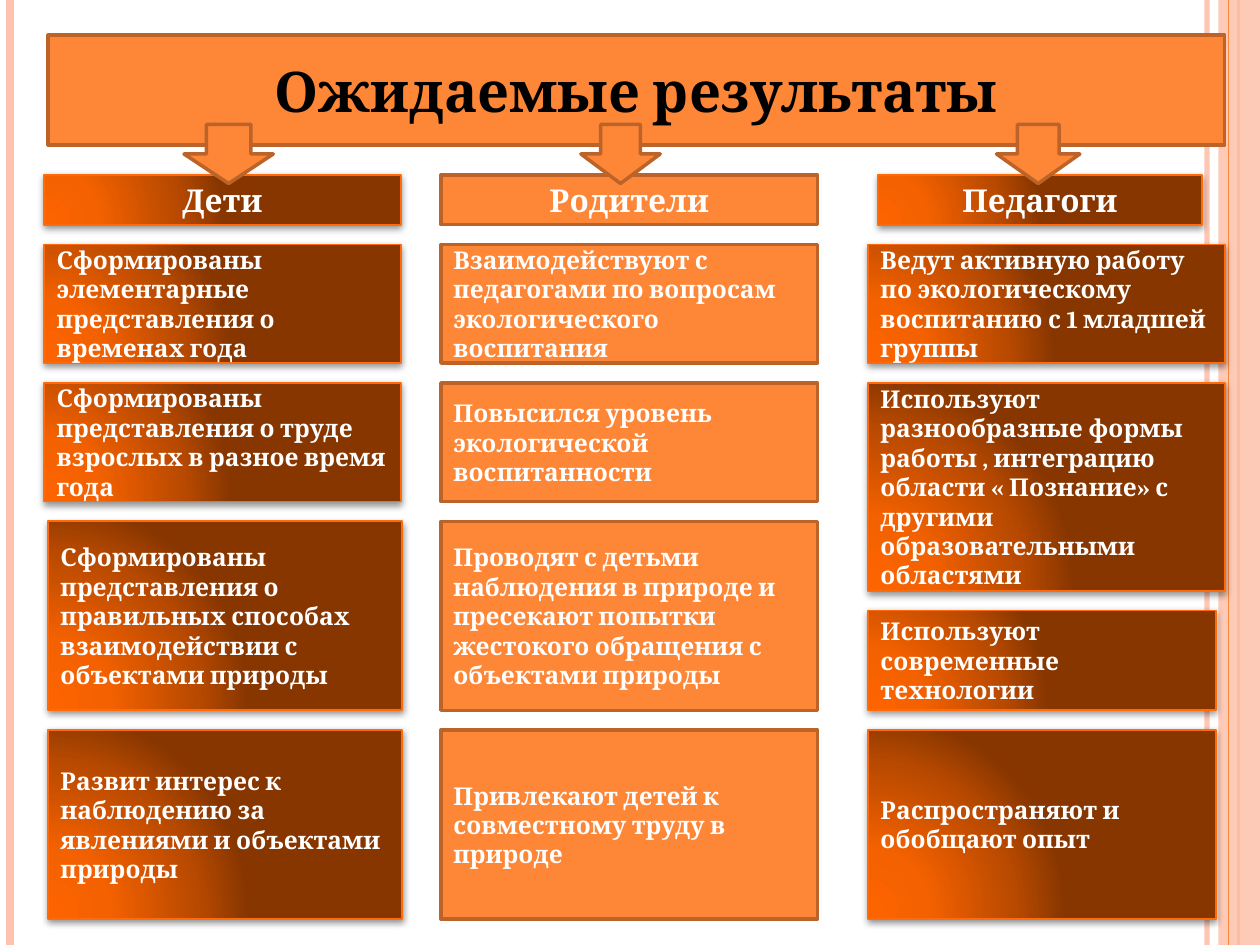
from lxml.etree import SubElement
from pptx import Presentation
from pptx.dml.color import RGBColor
from pptx.enum.shapes import MSO_CONNECTOR, MSO_SHAPE
from pptx.enum.text import MSO_ANCHOR, PP_ALIGN
from pptx.oxml import parse_xml
from pptx.oxml.ns import nsdecls, qn
from pptx.util import Cm, Pt

HUES = {
    "pale": "FEC3AE", "main": "FE8637", "edge": "BC6329",
    "glow": "FF6B0A", "white": "FFFFFF", "black": "000000",
}
STOPS = {0: "FD6400", 30: "F46100", 75: "B74900", 100: "873600"}
FONT = "Cambria"
TOP, GAP = 3.53, 0.4

KIDS = [
    ("Дети", 0.89, 7.19, 1),
    ("Сформированы элементарные представления о временах года", 0.89, 7.19, 2.39),
    ("Сформированы представления о труде взрослых в разное время года", 0.89, 7.19, 2.39),
    ("Сформированы представления о правильных способах взаимодействии "
     "с объектами природы", 0.97, 7.14, 3.81),
    ("Развит интерес к наблюдению за явлениями и объектами природы", 0.97, 7.14, 3.81),
]
FOLKS = [
    ("Родители", 8.89, 7.59, 1),
    ("Взаимодействуют с педагогами по вопросам экологического воспитания",
     8.89, 7.59, 2.39),
    ("Повысился уровень экологической воспитанности", 8.89, 7.59, 2.39),
    ("Проводят с детьми наблюдения в природе и пресекают попытки "
     "жестокого обращения с объектами природы", 8.89, 7.59, 3.81),
    ("Привлекают детей к совместному труду в природе", 8.89, 7.59, 3.81),
]
STAFF = [
    ("Педагоги", 17.7, 6.53, 1),
    ("Ведут активную работу по экологическому воспитанию с 1 младшей группы",
     17.5, 7.19, 2.39),
    ("Используют разнообразные формы работы , интеграцию области « Познание» "
     "с другими образовательными областями", 17.5, 7.19, 4.19),
    ("Используют современные технологии", 17.5, 7.01, 2),
    ("Распространяют и обобщают опыт", 17.5, 7.01, 3.81),
]
ARROWS = [(3.71, 1.8), (11.71, 1.6), (20.09, 1.68)]
RULES = [(24.33, 3, "pale", 93), (0.2, 4.5, "pale", 100), (24.97, 1.5, "main", 100)]


def hue(name):
    return RGBColor.from_string(HUES[name])


def fade(shape, share):
    for clr in shape.element.spPr.iter(qn("a:srgbClr")):
        SubElement(clr, qn("a:alpha"), val=str(share * 1000))


def add_rule(slide, x, width, name, share=100):
    line = slide.shapes.add_connector(MSO_CONNECTOR.STRAIGHT, Cm(x), 0, Cm(x), Cm(19.05))
    line.line.color.rgb = hue(name)
    line.line.width = Pt(width)
    SubElement(line.element.spPr, qn("a:effectLst"))
    if share < 100:
        fade(line, share)


def add_shape(slide, kind, x, y, w, h, fill="main", edge="edge", width=2):
    shape = slide.shapes.add_shape(kind, Cm(x), Cm(y), Cm(w), Cm(h))
    shape.shadow.inherit = False
    shape.fill.solid()
    shape.fill.fore_color.rgb = hue(fill)
    if edge:
        shape.line.color.rgb = hue(edge)
        shape.line.width = Pt(width)
    else:
        shape.line.fill.background()
    return shape


def add_glow(shape):
    props = shape.element.spPr
    stops = "".join(
        f'<a:gs pos="{pos * 1000}"><a:srgbClr val="{clr}"/></a:gs>'
        for pos, clr in STOPS.items())
    grad = parse_xml(
        f'<a:gradFill {nsdecls("a")} rotWithShape="1"><a:gsLst>{stops}</a:gsLst>'
        '<a:path path="circle"><a:fillToRect l="5000" t="100000" r="120000" b="10000"/>'
        '</a:path></a:gradFill>')
    props.replace(props.find(qn("a:solidFill")), grad)
    shape.line.color.rgb = hue("glow")
    shape.line.width = Pt(1)
    cast = SubElement(
        props.find(qn("a:effectLst")), qn("a:outerShdw"), blurRad=str(Pt(4)),
        dist=str(Pt(1.6)), dir="5400000", rotWithShape="0")
    clr = SubElement(cast, qn("a:srgbClr"), val=HUES["black"])
    SubElement(clr, qn("a:alpha"), val="42000")


def add_box(slide, text, x, y, w, h, size=14, align=PP_ALIGN.LEFT, ink="white"):
    box = add_shape(slide, MSO_SHAPE.FLOWCHART_PROCESS, x, y, w, h)
    frame = box.text_frame
    frame.text = text
    frame.word_wrap = True
    frame.vertical_anchor = MSO_ANCHOR.MIDDLE
    para = frame.paragraphs[0]
    para.alignment = align
    font = para.runs[0].font
    font.name, font.size, font.bold = FONT, Pt(size), True
    font.color.rgb = hue(ink)
    return box


def add_stack(slide, items, glow):
    y = TOP
    for row, (text, x, w, h) in enumerate(items):
        style = (14, PP_ALIGN.LEFT) if row else (18, PP_ALIGN.CENTER)
        box = add_box(slide, text, x, y, w, h, *style)
        if glow:
            add_glow(box)
        y += h + GAP


def add_frame(slide):
    for rule in RULES:
        add_rule(slide, *rule)
    band = add_shape(slide, MSO_SHAPE.RECTANGLE, 24.56, 0, 0.84, 19.05, "pale", None)
    fade(band, 87)
    add_rule(slide, 24.77, 0.75, "main")


def main():
    deck = Presentation()
    deck.slide_width, deck.slide_height = Cm(25.4), Cm(19.05)
    slide = deck.slides.add_slide(deck.slide_layouts[6])
    add_frame(slide)
    add_box(slide, "Ожидаемые результаты", 0.97, 0.71, 23.72, 2.21,
            32, PP_ALIGN.CENTER, "black")
    for items, glow in ((KIDS, True), (FOLKS, False), (STAFF, True)):
        add_stack(slide, items, glow)
    for x, w in ARROWS:
        add_shape(slide, MSO_SHAPE.DOWN_ARROW, x, 2.51, w, 1.19)
    deck.save("out.pptx")


if __name__ == "__main__":
    main()
